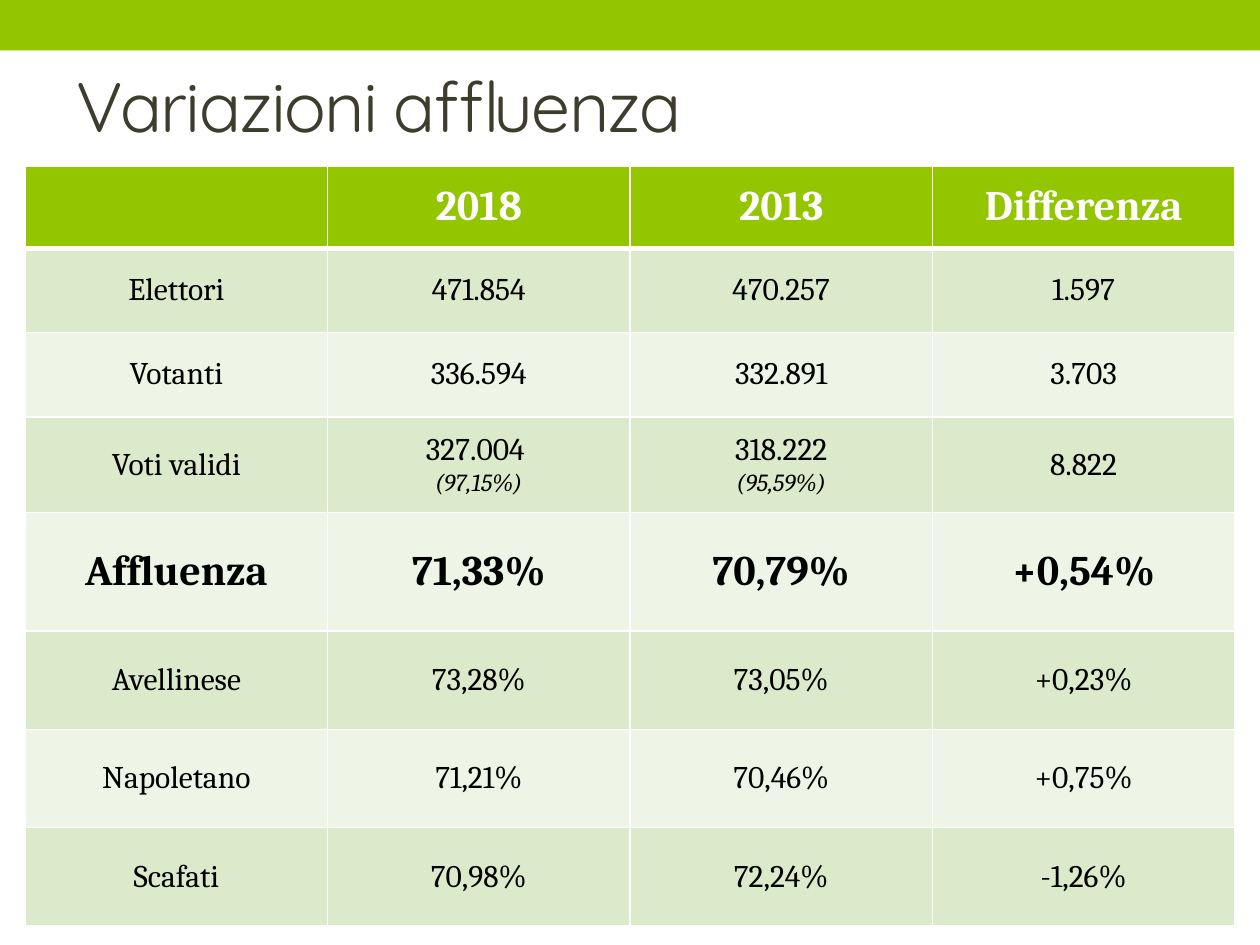
from lxml.etree import SubElement
from pptx import Presentation
from pptx.dml.color import RGBColor
from pptx.enum.shapes import MSO_SHAPE as Shape
from pptx.enum.text import MSO_ANCHOR as Anchor, PP_ALIGN as Align
from pptx.oxml.ns import qn
from pptx.util import Inches, Pt

COLORS = {
    "green": "94C600", "title": "3E3D2D", "white": "FFFFFF",
    "black": "000000", "odd": "DCEACC", "even": "EEF5E7",
}
TITLE = "Variazioni affluenza"
# A line break in a cell starts a smaller, italic note.
ROWS = [
    ("", "2018", "2013", "Differenza"),
    ("Elettori", "471.854", "470.257", "1.597"),
    ("Votanti", "336.594", "332.891", "3.703"),
    ("Voti validi", "327.004 \n(97,15%)", "318.222\n(95,59%)", "8.822"),
    ("Affluenza", "71,33%", "70,79%", "+0,54%"),
    ("Avellinese", "73,28%", "73,05%", "+0,23%"),
    ("Napoletano", "71,21%", "70,46%", "+0,75%"),
    ("Scafati", "70,98%", "72,24%", "-1,26%"),
]
ROW_HEIGHTS = [0.65, 0.67, 0.67, 0.76, 0.94, 0.78, 0.78, 0.78]
TABLE_LEFT, TABLE_TOP, TABLE_WIDTH = 0.2, 1.32, 9.6
HEADER_ROW, TURNOUT_ROW = 0, 4
BODY = {"name": "Cambria", "size": Pt(18), "bold": False, "italic": False}
STRONG = BODY | {"size": Pt(24), "bold": True}
NOTE = BODY | {"size": Pt(14), "italic": True}
HEADING = {"name": "Quicksand", "size": Pt(40)}


def rgb(name):
    return RGBColor.from_string(COLORS[name])


def add_run(paragraph, text, font_format, color):
    run = paragraph.add_run()
    run.text = text
    for attribute, value in font_format.items():
        setattr(run.font, attribute, value)
    run.font.color.rgb = rgb(color)
    return run


def add_borders(cell, widths):
    properties = cell._tc.get_or_add_tcPr()
    for side, points in widths.items():
        line = SubElement(properties, qn(f"a:ln{side}"), w=str(Pt(points)))
        fill = SubElement(line, qn("a:solidFill"))
        SubElement(fill, qn("a:srgbClr"), val=COLORS["white"])


def fill_cell(cell, text, row):
    is_header = row == HEADER_ROW
    add_borders(cell, {"L": 1, "R": 1, "T": 3 if row == 1 else 1,
                       "B": 3 if is_header else 1})
    cell.fill.solid()
    cell.fill.fore_color.rgb = rgb("green" if is_header else
                                   "odd" if row % 2 else "even")
    cell.vertical_anchor = Anchor.MIDDLE
    main_format = STRONG if row in (HEADER_ROW, TURNOUT_ROW) else BODY
    frame = cell.text_frame
    for index, line in enumerate(text.split("\n")):
        paragraph = frame.add_paragraph() if index else frame.paragraphs[0]
        paragraph.alignment = Align.CENTER
        if line:
            add_run(paragraph, line, NOTE if index else main_format,
                    "white" if is_header else "black")


def add_top_band(slide):
    band = slide.shapes.add_shape(Shape.RECTANGLE, 0, 0, Inches(10), Inches(0.4))
    band.shadow.inherit = False
    band.fill.solid()
    band.fill.fore_color.rgb = rgb("green")
    band.line.fill.background()


def add_title(slide):
    box = slide.shapes.add_textbox(Inches(0.51), Inches(0.29), Inches(9), Inches(1.08))
    frame = box.text_frame
    frame.word_wrap = True
    frame.vertical_anchor = Anchor.MIDDLE
    run = add_run(frame.paragraphs[0], TITLE, HEADING, "title")
    run.font._element.set("spc", "-100")


def add_turnout_table(slide):
    table = slide.shapes.add_table(
        len(ROWS), len(ROWS[0]), Inches(TABLE_LEFT), Inches(TABLE_TOP),
        Inches(TABLE_WIDTH), Inches(sum(ROW_HEIGHTS))).table
    for column in table.columns:
        column.width = Inches(TABLE_WIDTH / len(ROWS[0]))
    for row, (texts, height) in enumerate(zip(ROWS, ROW_HEIGHTS)):
        table.rows[row].height = Inches(height)
        for column, text in enumerate(texts):
            fill_cell(table.cell(row, column), text, row)


def main():
    presentation = Presentation()
    presentation.slide_width, presentation.slide_height = Inches(10), Inches(7.5)
    slide = presentation.slides.add_slide(presentation.slide_layouts[6])
    add_top_band(slide)
    add_title(slide)
    add_turnout_table(slide)
    presentation.save("out.pptx")


if __name__ == "__main__":
    main()
